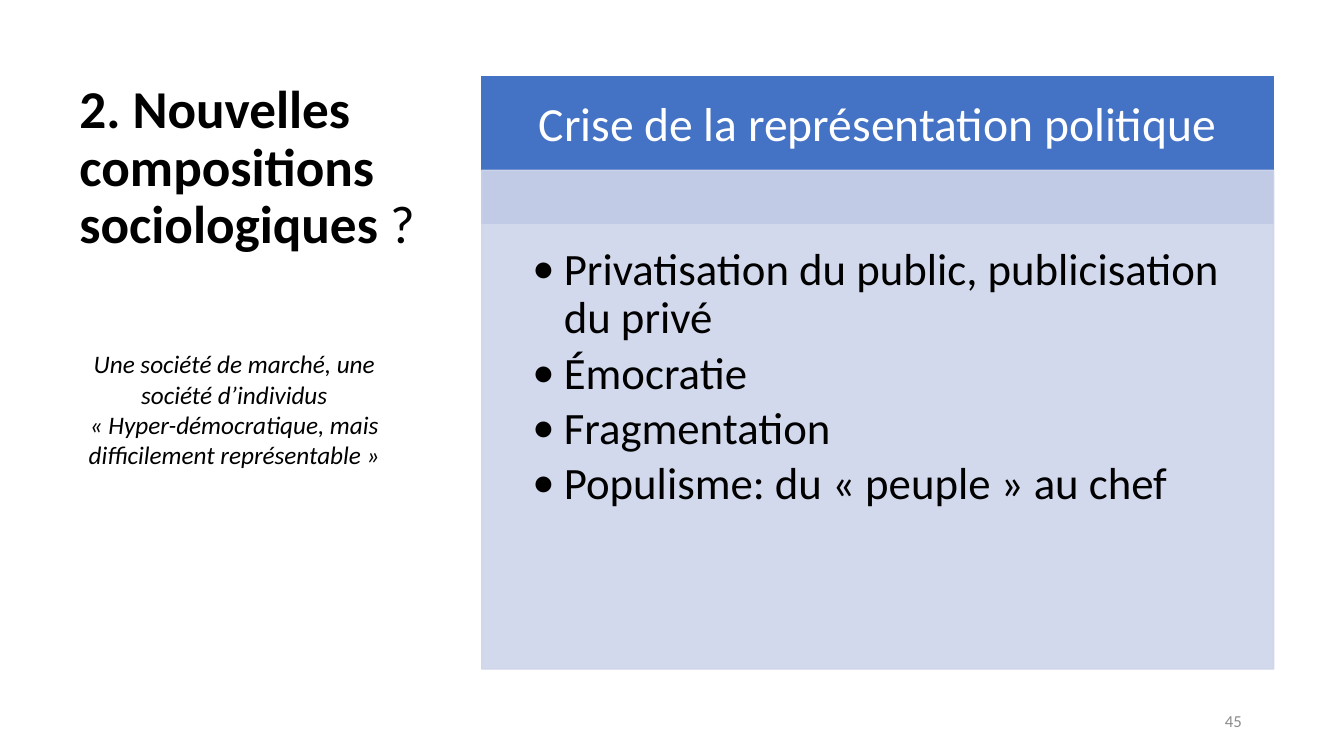
from dataclasses import dataclass, field

from lxml import etree
from pptx import Presentation
from pptx import util as u
from pptx.dml.color import RGBColor
from pptx.enum import shapes, text
from pptx.oxml.ns import qn

FONT = "Calibri"
BLACK, WHITE, GREY = "000000", "FFFFFF", "8C8C8C"
BLUE, PALE_BLUE = "4472C4", "CFD5EA"
LEFT, CENTER, RIGHT = (text.PP_ALIGN.LEFT, text.PP_ALIGN.CENTER,
                       text.PP_ALIGN.RIGHT)
TOP, MIDDLE, BOTTOM = (text.MSO_ANCHOR.TOP, text.MSO_ANCHOR.MIDDLE,
                       text.MSO_ANCHOR.BOTTOM)


@dataclass
class Area:
    left: float
    top: float
    width: float
    height: float

    def lengths(self) -> list:
        return [u.Cm(n) for n in (self.left, self.top, self.width, self.height)]


@dataclass
class Style:
    size: float
    color: str = BLACK
    align: int = LEFT
    anchor: int = TOP
    insets: tuple = (0.25, 0.13, 0.25, 0.13)  # left, top, right, bottom
    font: dict = field(default_factory=dict)
    para: dict = field(default_factory=dict)
    bullet: bool = False


@dataclass
class Panel:
    area: Area
    fill: str
    opacity: int
    lines: list
    style: Style


PANELS = [
    Panel(Area(12.14, 1.93, 19.96, 3.71), BLUE, 100,
          ["Crise de la représentation politique"],
          Style(34, WHITE, CENTER, insets=(0.66, 0.43, 0.66, 0.38))),
    Panel(Area(12.14, 4.29, 19.96, 12.57), PALE_BLUE, 90,
          ["Privatisation du public, publicisation du privé",
           "Émocratie",
           "Fragmentation",
           "Populisme: du « peuple » au chef"],
          Style(32, insets=(0.48, 1.93, 0.64, 0.71), bullet=True,
                para={"line_spacing": 0.9, "space_after": u.Pt(4.8)})),
]


def rgb(color: str) -> RGBColor:
    return RGBColor.from_string(color)


def set_all(target, values: dict) -> None:
    for name, value in values.items():
        setattr(target, name, value)


def add_bullet(para) -> None:
    props = para._p.get_or_add_pPr()
    props.set("marL", str(u.Cm(1.59)))
    props.set("indent", str(u.Cm(-0.79)))
    etree.SubElement(props, qn("a:buFont")).set("typeface", FONT)
    etree.SubElement(props, qn("a:buChar")).set("char", "•")


def write(box, lines: list, style: Style) -> None:
    """Each line is a paragraph: a string, or a list of (text, font values)."""
    frame = box.text_frame
    sides = ("margin_left", "margin_top", "margin_right", "margin_bottom")
    set_all(frame, {"word_wrap": True, "auto_size": text.MSO_AUTO_SIZE.NONE,
                    "vertical_anchor": style.anchor})
    set_all(frame, {side: u.Cm(n) for side, n in zip(sides, style.insets)})
    for index, line in enumerate(lines):
        para = frame.add_paragraph() if index else frame.paragraphs[0]
        set_all(para, {"alignment": style.align, **style.para})
        if style.bullet:
            add_bullet(para)
        for words, extra in [(line, {})] if isinstance(line, str) else line:
            span = para.add_run()
            span.text = words
            set_all(span.font, {"name": FONT, "size": u.Pt(style.size),
                                **style.font, **extra})
            span.font.color.rgb = rgb(style.color)


def set_opacity(color_format, percent: int) -> None:
    for color in color_format._xFill.iter(qn("a:srgbClr")):
        etree.SubElement(color, qn("a:alpha")).set("val", str(percent * 1000))


def add_panel(page, panel: Panel) -> None:
    box = page.shapes.add_shape(shapes.MSO_SHAPE.RECTANGLE,
                                *panel.area.lengths())
    box.shadow.inherit = False
    box.line.width = u.Pt(1)
    for paint in (box.fill, box.line.fill):
        paint.solid()
        paint.fore_color.rgb = rgb(panel.fill)
    if panel.opacity < 100:
        for color in box._element.spPr.iter(qn("a:srgbClr")):
            etree.SubElement(color, qn("a:alpha")).set(
                "val", str(panel.opacity * 1000))
    write(box, panel.lines, panel.style)


def add_text(page, area: Area, lines: list, style: Style) -> None:
    write(page.shapes.add_textbox(*area.lengths()), lines, style)


def main() -> None:
    deck = Presentation()
    set_all(deck, {"slide_width": u.Cm(33.87), "slide_height": u.Cm(19.05)})
    page = deck.slides.add_slide(deck.slide_layouts[5])

    # Title
    title = page.shapes.title
    set_all(title, dict(zip(("left", "top", "width", "height"),
                            Area(1.75, 1.78, 9.53, 4.78).lengths())))
    write(title,
          [[("2. Nouvelles compositions sociologiques", {"bold": True}),
            (" ?", {"bold": False})]],
          Style(38, anchor=BOTTOM, para={"line_spacing": 0.9}))

    # Heading panel and list panel
    for panel in PANELS:
        add_panel(page, panel)

    # Quotation under the title
    add_text(page, Area(1.75, 8.66, 8.31, 4.11),
             ["Une société de marché, une société d’individus",
              "« Hyper-démocratique, mais difficilement représentable »"],
             Style(18, align=CENTER, font={"italic": True}))

    # Page number
    add_text(page, Area(23.93, 17.65, 7.62, 1.02), ["45"],
             Style(12, GREY, RIGHT, MIDDLE))

    deck.save("out.pptx")


if __name__ == "__main__":
    main()
